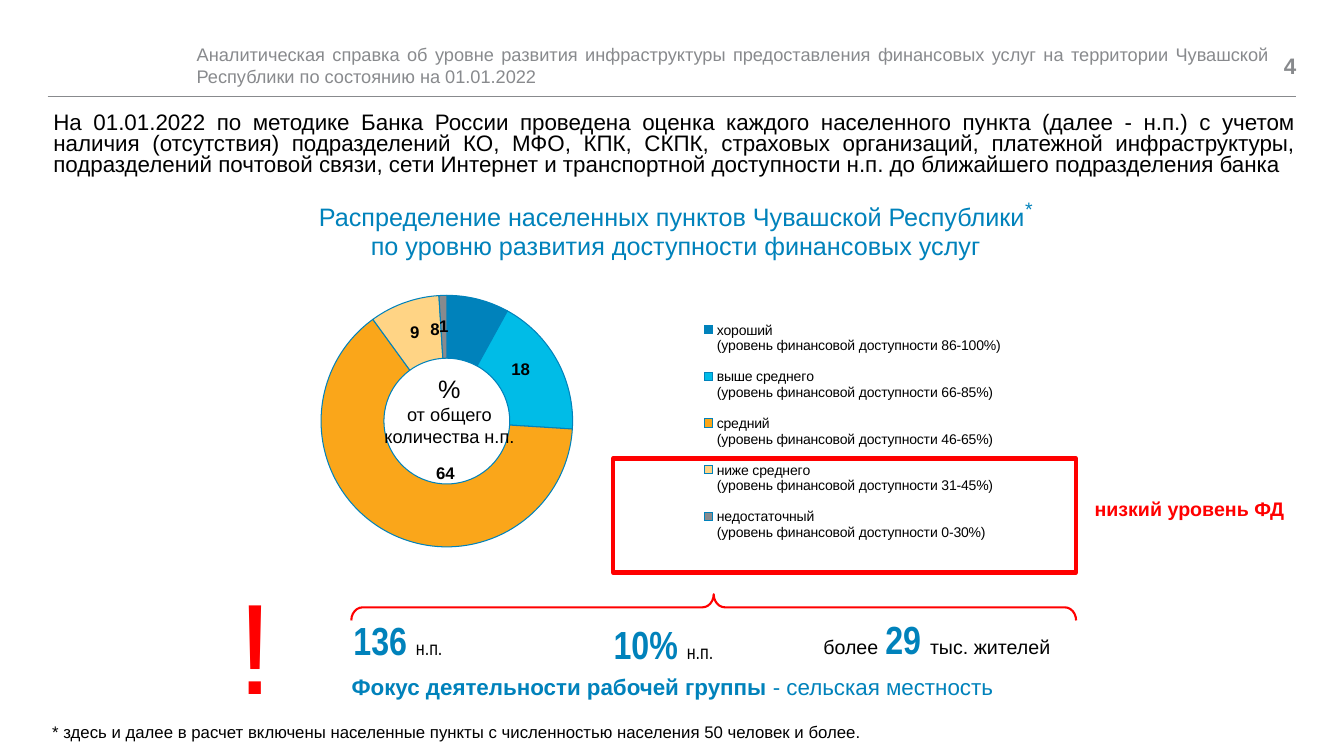
from lxml import etree
from pptx import Presentation
from pptx.chart.data import CategoryChartData
from pptx.dml.color import RGBColor
from pptx.enum.chart import XL_CHART_TYPE, XL_LEGEND_POSITION
from pptx.enum.shapes import MSO_CONNECTOR, MSO_SHAPE
from pptx.enum.text import MSO_ANCHOR, PP_ALIGN
from pptx.oxml import parse_xml
from pptx.oxml.ns import qn
from pptx.util import Pt

RING = XL_CHART_TYPE.DOUGHNUT
RIGHT = XL_LEGEND_POSITION.RIGHT
LINE = MSO_CONNECTOR.STRAIGHT
RECT, BRACE = MSO_SHAPE.RECTANGLE, MSO_SHAPE.LEFT_BRACE
TOP, MID = MSO_ANCHOR.TOP, MSO_ANCHOR.MIDDLE
L, C, R, J = PP_ALIGN.LEFT, PP_ALIGN.CENTER, PP_ALIGN.RIGHT, PP_ALIGN.JUSTIFY
BLUE, GREY, RED, BLACK = "0082BB", "888A8D", "FF0000", "000000"
SANS, SLIM = "Arial", "Arial Narrow"
CHART_NS = "http://schemas.openxmlformats.org/drawingml/2006/chart"

deck = Presentation()
deck.slide_width, deck.slide_height = Pt(960), Pt(540)
slide = deck.slides.add_slide(deck.slide_layouts[6])
shapes = slide.shapes


def color(code):
    return RGBColor.from_string(code)


def write(box, *lines, align=L, anchor=TOP, inset=True, wrap=True, space=None):
    """Each line is a list of runs: text, size, colour, bold, font, raise."""
    frame = shapes.add_textbox(*map(Pt, box)).text_frame
    frame.word_wrap, frame.vertical_anchor = wrap, anchor
    if not inset:
        frame.margin_left = frame.margin_right = 0
        frame.margin_top = frame.margin_bottom = 0
    for i, runs in enumerate(lines):
        para = frame.paragraphs[0] if i == 0 else frame.add_paragraph()
        para.alignment = align
        if space:
            para.line_spacing = space
        for text, size, tint, bold, face, lift in runs:
            if text == "\n":
                para.add_line_break()
                continue
            run = para.add_run()
            run.text = text
            font = run.font
            font.size, font.bold, font.name = Pt(size), bold, face
            font.color.rgb = color(tint)
            if lift:
                run._r.get_or_add_rPr().set("baseline", str(lift))


# Header
rule = shapes.add_connector(LINE, Pt(34), Pt(68.5), Pt(926), Pt(68.5))
rule.line.color.rgb, rule.line.width = color(GREY), Pt(0.5)
etree.SubElement(rule._element.spPr, qn("a:effectLst"))
write((140.5, 34, 765, 25),
      [("Аналитическая справка об уровне развития инфраструктуры предоставления "
        "финансовых услуг на территории Чувашской Республики по состоянию на "
        "01.01.2022", 13, GREY, False, SANS, 0)],
      align=J, anchor=MID, inset=False)
write((867.5, 34, 58.5, 25), [("4", 16, GREY, True, SANS, 0)],
      align=R, anchor=MID, inset=False)

# Chart
data = CategoryChartData(number_format="0")
data.categories = [
    f"{name}\n(уровень финансовой доступности {span}%)" for name, span in (
        ("хороший ", "86-100"), ("выше среднего", "66-85"),
        ("средний ", "46-65"), ("ниже среднего ", "31-45"),
        ("недостаточный", "0-30"))]
data.add_series("Series 1", (8, 18, 64, 9, 1))
chart = shapes.add_chart(RING, Pt(168), Pt(204.5), Pt(630), Pt(216.5), data).chart
chart.has_title = False
chart.font.size, chart.font.name = Pt(10), SANS
chart.font.color.rgb = color(BLACK)
chart.has_legend = True
chart.legend.position, chart.legend.include_in_layout = RIGHT, False
plot = chart.plots[0]
plot.vary_by_categories = True
plot.has_data_labels = True
series = plot.series[0]
marks = series.data_labels
marks.show_value, marks.number_format = True, "0"
marks.number_format_is_linked = False
fonts = [marks.font]
for i, tint in enumerate((BLUE, "00BCE7", "FAA61A", "FFD485", GREY)):
    point = series.points[i]
    point.format.fill.solid()
    point.format.fill.fore_color.rgb = color(tint)
    point.format.line.color.rgb = color(BLUE)
    point.format.line.width = Pt(0.75)
    fonts.append(point.data_label.font)
for font in fonts:
    font.size, font.bold, font.name = Pt(12), True, SANS
    font.color.rgb = color(BLACK)

# Chart layout: ring, legend and shifted labels
root = chart._chartSpace
for hole in root.iter(qn("c:holeSize")):
    hole.set("val", "62")


def layout(**parts):
    rows = "".join(f'<c:{key} val="{val}"/>' for key, val in parts.items())
    return parse_xml(f'<c:layout xmlns:c="{CHART_NS}"><c:manualLayout>{rows}'
                     "</c:manualLayout></c:layout>")


area = root.find(".//" + qn("c:plotArea"))
for old in area.findall(qn("c:layout")):
    area.remove(old)
area.insert(0, layout(layoutTarget="inner", xMode="edge", yMode="edge",
                      x=0.07, y=0.03, w=0.34, h=0.83))
legend = root.find(".//" + qn("c:legend"))
for old in legend.findall(qn("c:layout")):
    legend.remove(old)
legend.find(qn("c:legendPos")).addnext(
    layout(xMode="edge", yMode="edge", x=0.51, y=0.07, w=0.38, h=0.82))
shifts = {"0": (-0.04, 0), "1": (-0.01, -0.02), "2": (0.05, -0.1)}
for label in root.iter(qn("c:dLbl")):
    key = label.find(qn("c:idx"))
    if key.get("val") in shifts:
        x, y = shifts[key.get("val")]
        key.addnext(layout(x=x, y=y))

write((267, 263, 108, 60.5), [("%", 18, BLACK, False, SANS, 0)],
      [("от общего количества н.п.", 13, BLACK, False, SANS, 0)], align=C)

# Low level frame and brace
frame = shapes.add_shape(RECT, Pt(438), Pt(327.5), Pt(330.5), Pt(81.5))
brace = shapes.add_shape(BRACE, Pt(500.4), Pt(175), Pt(18.7), Pt(517.7))
brace.rotation = 90
brace.adjustments[0], brace.adjustments[1] = 0.43, 0.5
for shape, width in ((frame, 3), (brace, 1.5)):
    shape.shadow.inherit = False
    shape.fill.background()
    shape.line.color.rgb, shape.line.width = color(RED), Pt(width)
write((774.7, 351.4, 151, 24.5),
      [("низкий уровень ФД", 14, RED, True, SANS, 0)], wrap=False)

# Key figures
for box, figure in (((166.3, 437, 236, 41), "136 "), ((387.4, 439.2, 173, 44), "10% ")):
    write(box, [(figure, 28, BLUE, True, SLIM, 0),
                ("н.п.", 14, BLACK, False, SLIM, 0)], align=C)
write((581, 436.3, 178, 41),
      [("более", 14, BLACK, False, SANS, 0), (" ", 18, BLACK, False, SANS, 0),
       ("29 ", 28, BLUE, True, SLIM, 0),
       ("тыс. жителей", 14, BLACK, False, SANS, 0)], wrap=False)
write((238.3, 477.4, 484, 26.6),
      [("Фокус деятельности рабочей группы ", 16, BLUE, True, SANS, 0),
       ("- сельская местность", 16, BLUE, False, SANS, 0)], align=C)
write((162.7, 400.3, 26.6, 120), [("!", 92, RED, False, SANS, 0)])

# Title, intro and footnote
write((36.7, 141, 892, 62),
      [("Распределение населенных пунктов Чувашской Республики", 18, BLUE, False, SANS, 0),
       ("*", 24, BLUE, False, SANS, 30000), ("\n", 20, BLUE, False, SANS, 0),
       ("по уровню развития доступности финансовых услуг", 18, BLUE, False, SANS, 0)],
      align=C, inset=False, space=0.9)
write((31, 77.8, 901.5, 52.5),
      [("На 01.01.2022 по методике Банка России проведена оценка каждого населенного "
        "пункта (далее - н.п.) с учетом наличия (отсутствия) подразделений КО, МФО, "
        "КПК, СКПК, страховых организаций, платежной инфраструктуры, подразделений "
        "почтовой связи, сети Интернет и транспортной доступности н.п. до ближайшего "
        "подразделения банка", 16, BLACK, False, SANS, 0)], align=J, space=Pt(15))
write((30.2, 512, 901.5, 21.6),
      [("* здесь и далее в расчет включены населенные пункты с численностью "
        "населения 50 человек и более.", 12, BLACK, False, SANS, 0)], align=J)

deck.save("out.pptx")
